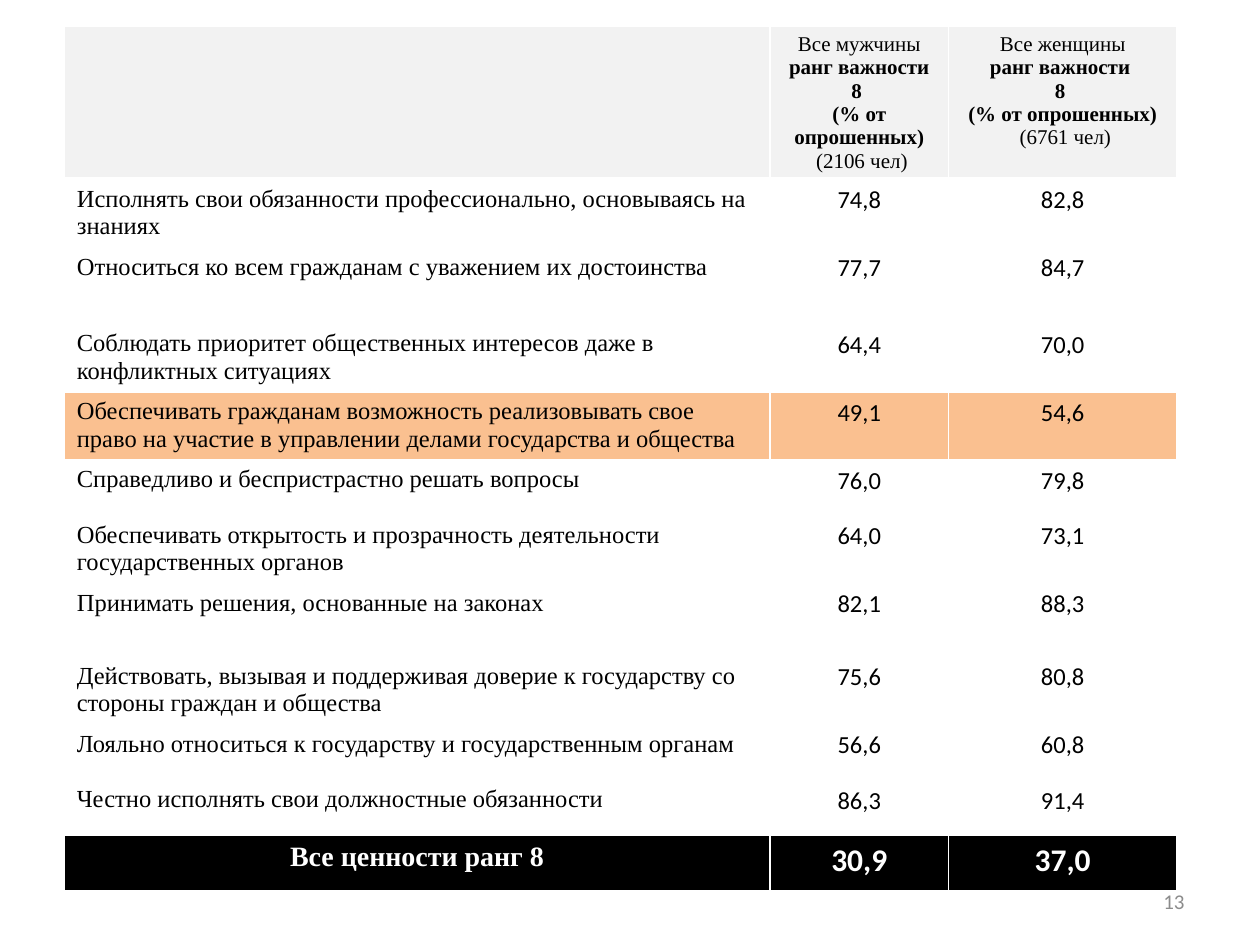
"""Build a slide with a table of value rankings among men and women."""
import pptx
import pptx.dml.color
import pptx.enum.text
import pptx.oxml
import pptx.oxml.ns
import pptx.util
from pptx.util import Inches

COLORS = {
    "header": "F2F2F2", "highlight": "FAC090", "total": "000000",
    "text": "000000", "inverse": "FFFFFF", "border": "FFFFFF", "number": "8C8C8C",
}
SERIF, SANS = "Times New Roman", "Calibri"
LEFT = pptx.enum.text.PP_ALIGN.LEFT
CENTER = pptx.enum.text.PP_ALIGN.CENTER
RIGHT = pptx.enum.text.PP_ALIGN.RIGHT

HEADERS = [
    [],
    [("Все мужчины", False), ("ранг важности 8 ", True),
     ("(% от опрошенных)", True), (" (2106 чел)", False)],
    [("Все женщины", False), ("ранг важности ", True), ("8 ", True),
     ("(% от опрошенных)", True), (" (6761 чел)", False)],
]
VALUES = [
    (0.54, "Исполнять свои обязанности профессионально, основываясь на знаниях", "74,8", "82,8"),
    (0.61, "Относиться ко всем гражданам с уважением их достоинства", "77,7", "84,7"),
    (0.54, "Соблюдать приоритет общественных интересов даже в конфликтных ситуациях", "64,4", "70,0"),
    (0.54, "Обеспечивать гражданам возможность реализовывать свое право на участие "
           "в управлении делами государства и общества", "49,1", "54,6"),
    (0.44, "Справедливо и беспристрастно решать вопросы", "76,0", "79,8"),
    (0.54, "Обеспечивать открытость и прозрачность деятельности государственных органов", "64,0", "73,1"),
    (0.58, "Принимать решения, основанные на законах", "82,1", "88,3"),
    (0.54, "Действовать, вызывая и поддерживая доверие к государству со стороны граждан и общества",
     "75,6", "80,8"),
    (0.44, "Лояльно относиться к государству и государственным органам", "56,6", "60,8"),
    (0.44, "Честно исполнять свои должностные обязанности", "86,3", "91,4"),
]
HIGHLIGHTED = 3
TOTAL = (0.44, "Все ценности ранг 8", "30,9", "37,0")
HEADER_HEIGHT = 0.94
COLUMN_WIDTHS = [5.6, 1.42, 1.81]


def rgb(name):
    return pptx.dml.color.RGBColor.from_string(COLORS[name])


def write(text_frame, lines, size, font, color="text", alignment=CENTER):
    for index, (text, bold) in enumerate(lines):
        paragraph = text_frame.add_paragraph() if index else text_frame.paragraphs[0]
        paragraph.alignment = alignment
        run = paragraph.add_run()
        run.text = text
        run.font.size = pptx.util.Pt(size)
        run.font.name = font
        run.font.bold = bold
        run.font.color.rgb = rgb(color)


def style_cell(cell, fill, bottom_width=1):
    properties = cell._tc.get_or_add_tcPr()
    for side in "LRTB":
        width = pptx.util.Pt(bottom_width if side == "B" else 1)
        properties.append(pptx.oxml.parse_xml(
            f'<a:ln{side} {pptx.oxml.ns.nsdecls("a")} w="{width}"><a:solidFill>'
            f'<a:srgbClr val="{COLORS["border"]}"/></a:solidFill></a:ln{side}>'))
    if fill:
        cell.fill.solid()
        cell.fill.fore_color.rgb = rgb(fill)
    else:
        cell.fill.background()


def add_ranking_table(slide):
    heights = [HEADER_HEIGHT] + [row[0] for row in VALUES] + [TOTAL[0]]
    table = slide.shapes.add_table(
        len(heights), len(COLUMN_WIDTHS), Inches(0.51), Inches(0.21),
        Inches(sum(COLUMN_WIDTHS)), Inches(sum(heights))).table
    for column, width in zip(table.columns, COLUMN_WIDTHS):
        column.width = Inches(width)
    for row, height in zip(table.rows, heights):
        row.height = Inches(height)

    for column, lines in enumerate(HEADERS):
        cell = table.cell(0, column)
        write(cell.text_frame, lines, 12, SERIF)
        style_cell(cell, "header", bottom_width=3)
    for index, (_, *texts) in enumerate(VALUES):
        for column, text in enumerate(texts):
            cell = table.cell(index + 1, column)
            font, alignment = (SANS, CENTER) if column else (SERIF, LEFT)
            write(cell.text_frame, [(text, False)], 14, font, alignment=alignment)
            style_cell(cell, "highlight" if index == HIGHLIGHTED else None)
    for column, text in enumerate(TOTAL[1:]):
        cell = table.cell(len(heights) - 1, column)
        size, font = (18, SANS) if column else (16, SERIF)
        write(cell.text_frame, [(text, True)], size, font, "inverse")
        style_cell(cell, "total")


def add_slide_number(slide):
    box = slide.shapes.add_textbox(Inches(7.17), Inches(6.95), Inches(2.33), Inches(0.4))
    box.text_frame.word_wrap = True
    box.text_frame.vertical_anchor = pptx.enum.text.MSO_ANCHOR.MIDDLE
    write(box.text_frame, [("13", False)], 12, SANS, "number", RIGHT)


def main():
    presentation = pptx.Presentation()
    presentation.slide_width = Inches(10)
    presentation.slide_height = Inches(7.5)
    slide = presentation.slides.add_slide(presentation.slide_layouts[6])
    add_ranking_table(slide)
    add_slide_number(slide)
    presentation.save("out.pptx")


if __name__ == "__main__":
    main()
